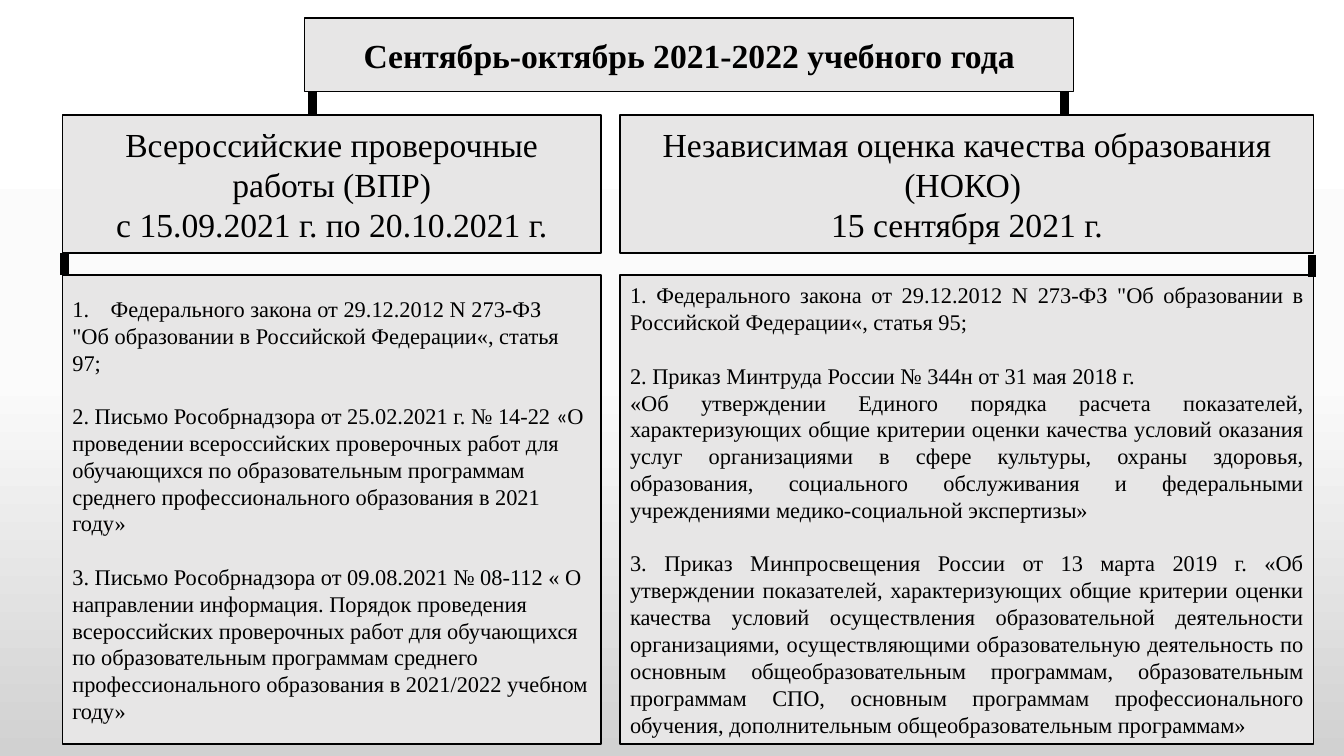
from copy import deepcopy

from lxml import etree
from pptx import Presentation
from pptx import util as u
from pptx.dml.color import RGBColor
from pptx.enum import shapes, text
from pptx.oxml.ns import qn

ALIGN = text.PP_ALIGN


def colour(value):
    return RGBColor.from_string(value)


class Board:
    """Holds the style and the current slide, and draws its elements."""

    font = "Times New Roman"
    ink = "000000"
    panel = "E7E6E6"
    gap = 19

    def __init__(self, deck):
        self.slide = deck.slides.add_slide(deck.slide_layouts[5])

    def background(self, stops):
        fill = self.slide.background.fill
        fill.gradient()
        fill.gradient_angle = 270
        stop_list = self.slide.element.find(".//" + qn("a:gsLst"))
        stop_list.insert(1, deepcopy(stop_list[0]))
        for stop, (position, value) in zip(fill.gradient_stops, stops):
            stop.position = position
            stop.color.rgb = colour(value)

    def title(self, place, wording):
        box = self.slide.shapes.title
        box.left, box.top, box.width, box.height = map(u.Inches, place)
        self.dress(box, [wording], 24, ALIGN.CENTER, bold=True)

    def box(self, place, paragraphs, size, align):
        box = self.slide.shapes.add_shape(
            shapes.MSO_SHAPE.RECTANGLE, *map(u.Inches, place))
        box.shadow.inherit = False
        self.dress(box, paragraphs, size, align)
        return box

    def dress(self, box, paragraphs, size, align, bold=False):
        box.fill.solid()
        box.fill.fore_color.rgb = colour(self.panel)
        box.line.color.rgb = colour(self.ink)
        box.line.width = u.Pt(1)
        frame = box.text_frame
        frame.word_wrap = True
        frame.auto_size = text.MSO_AUTO_SIZE.NONE
        frame.vertical_anchor = text.MSO_ANCHOR.MIDDLE
        for index, wording in enumerate(paragraphs):
            para = frame.paragraphs[0] if index == 0 else frame.add_paragraph()
            para.text = wording
            para.alignment = align
            para.font.name = self.font
            para.font.size = u.Pt(size)
            para.font.bold = bold
            para.font.color.rgb = colour(self.ink)
            if index and wording.startswith(("2.", "3.")):
                para.space_before = u.Pt(self.gap)

    def number(self, para):
        properties = para._p.get_or_add_pPr()
        properties.set("marL", str(u.Inches(0.38)))
        properties.set("indent", str(u.Inches(-0.38)))
        bullet = etree.SubElement(properties, qn("a:buAutoNum"))
        bullet.set("type", "arabicPeriod")
        properties.find(qn("a:defRPr")).addprevious(bullet)

    def split_runs(self, para, spans):
        para.text = ""
        for wording, font in spans:
            span = para.add_run()
            span.text = wording
            span.font.name = font

    def link(self, x, top):
        line = self.slide.shapes.add_connector(
            shapes.MSO_CONNECTOR.STRAIGHT,
            *map(u.Inches, (x, top, x, top + 0.22)))
        line.line.color.rgb = colour(self.ink)
        line.line.width = u.Pt(6)
        etree.SubElement(line._element.spPr, qn("a:effectLst"))


def main():
    deck = Presentation()
    deck.slide_width, deck.slide_height = u.Inches(13.33), u.Inches(7.5)
    board = Board(deck)
    board.background([(0, "FFFFFF"), (0.5, "FBFBFB"), (1, "D1D1D1")])
    board.title((3.02, 0.18, 7.63, 0.73),
                "Сентябрь-октябрь 2021-2022 учебного года")

    left, right = (0.62, 5.34), (6.15, 6.88)
    headings = [
        (left, ["Всероссийские проверочные работы (ВПР)",
                "с 15.09.2021 г. по 20.10.2021 г."]),
        (right, ["Независимая оценка качества образования (НОКО) ",
                 "15 сентября 2021 г."]),
    ]
    for (x, width), lines in headings:
        board.box((x, 1.14, width, 1.37), lines, 24, ALIGN.CENTER)

    letter = "2. Письмо Рособрнадзора от 25.02.2021 г. № 14-22 "
    subject = ("О проведении всероссийских проверочных работ для обучающихся "
               "по образовательным программам среднего профессионального "
               "образования в 2021 году»")
    tests = board.box((left[0], 2.73, left[1], 4.65), [
        "Федерального закона от 29.12.2012 N 273-ФЗ",
        "\"Об образовании в Российской Федерации«, статья 97;",
        letter,
        "3. Письмо Рособрнадзора от 09.08.2021 № 08-112 « О направлении "
        "информация. Порядок проведения всероссийских проверочных работ для "
        "обучающихся по образовательным программам среднего "
        "профессионального образования в 2021/2022 учебном году»",
    ], 16, ALIGN.LEFT)
    law, _, order, _ = tests.text_frame.paragraphs
    board.number(law)
    board.split_runs(order, [(letter, board.font), ("«", "Calibri"),
                             (subject, board.font)])

    board.box((right[0], 2.73, right[1], 4.65), [
        "1. Федерального закона от 29.12.2012 N 273-ФЗ \"Об образовании в "
        "Российской Федерации«, статья 95;",
        "2. Приказ Минтруда России № 344н от 31 мая 2018 г. ",
        "«Об утверждении Единого порядка расчета показателей, "
        "характеризующих общие критерии оценки качества условий оказания "
        "услуг организациями в сфере культуры, охраны здоровья, образования, "
        "социального обслуживания и федеральными учреждениями "
        "медико-социальной экспертизы»",
        "3. Приказ Минпросвещения России от 13 марта 2019 г. «Об утверждении "
        "показателей, характеризующих общие критерии оценки качества условий "
        "осуществления образовательной деятельности организациями, "
        "осуществляющими образовательную деятельность по основным "
        "общеобразовательным программам, образовательным программам СПО, "
        "основным программам профессионального обучения, дополнительным "
        "общеобразовательным программам»",
    ], 16, ALIGN.JUSTIFY)

    for x, top in [(3.1, 0.91), (10.56, 0.91), (0.64, 2.51), (13.01, 2.53)]:
        board.link(x, top)
    deck.save("out.pptx")


if __name__ == "__main__":
    main()
